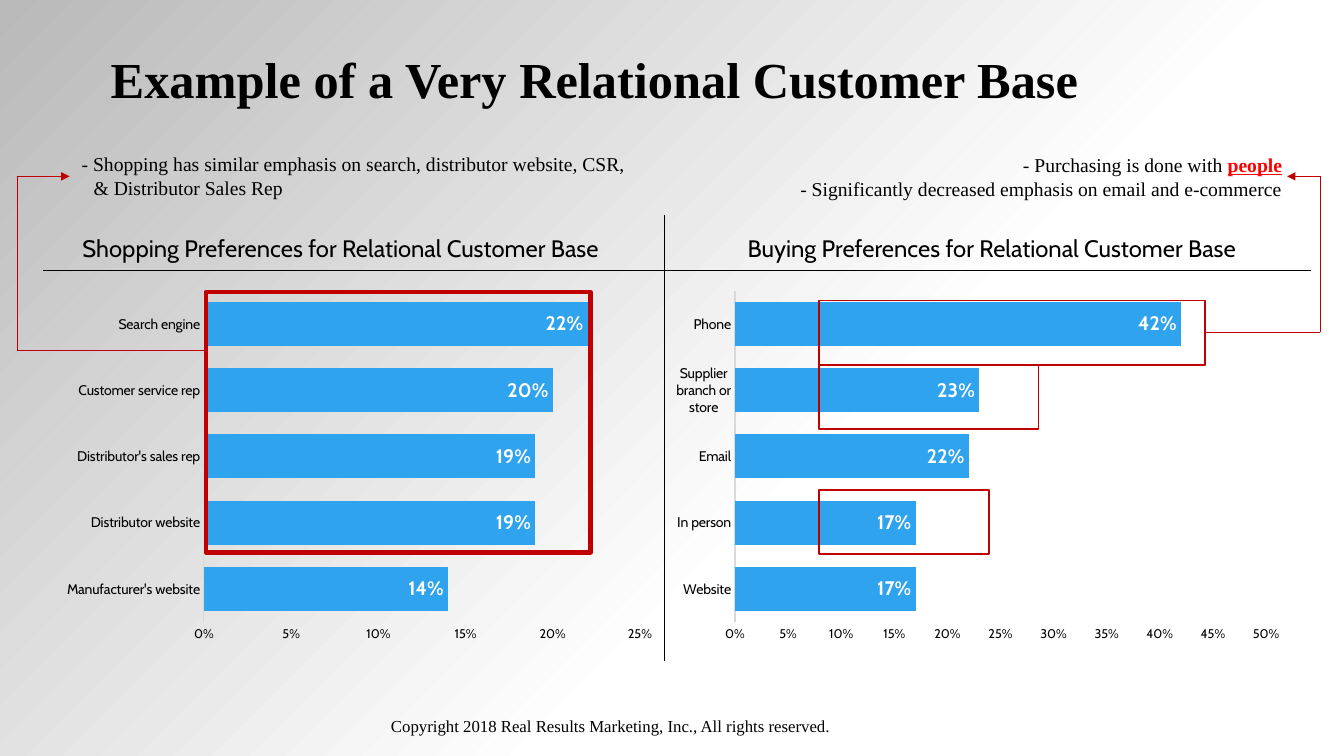
from dataclasses import dataclass
from itertools import pairwise

from lxml import etree
from pptx import Presentation
from pptx.chart.data import CategoryChartData
from pptx.dml.color import RGBColor
from pptx.enum.chart import XL_CHART_TYPE as CT, XL_LABEL_POSITION as LP, XL_TICK_MARK as TM
from pptx.enum.shapes import MSO_CONNECTOR as MC, MSO_SHAPE as MS
from pptx.enum.text import MSO_ANCHOR as MA, PP_ALIGN as AL
from pptx.oxml import parse_xml
from pptx.oxml.ns import nsdecls, qn
from pptx.util import Pt


@dataclass(frozen=True)
class Theme:
    serif: str = "Times New Roman"
    sans: str = "Cabin"
    black: str = "000000"
    white: str = "FFFFFF"
    shade: str = "B9B9B9"
    axis: str = "D9D9D9"
    bar: str = "2FA3EE"
    mark: str = "C00000"
    alert: str = "FF0000"
    title: float = 36
    heading: float = 17
    note: float = 14
    value: float = 14
    footer: float = 12
    category: float = 10
    scale: float = 9
    hairline: float = 0.75


T = Theme()

TITLE = "Example of a Very Relational Customer Base"
FOOTER = "Copyright 2018 Real Results Marketing, Inc., All rights reserved."
MID_X, RULE_Y = 474.5, 193
RULES = [((MID_X, 472.3), (MID_X, 153.4)), ((31, RULE_Y), (936.7, RULE_Y))]
CHART_TOP, CHART_H = 202.3, 261.4
PLOT_TOP, PLOT_H = 207.9, 236.4

# Notes hold paragraphs of (text, emphasised) runs; boxes are left, top, width, height.
PANELS = [
    dict(
        heading="Shopping Preferences for Relational Customer Base",
        heading_span=(0, 486.7),
        bars=[("Manufacturer's website", 0.14), ("Distributor website", 0.19),
              ("Distributor's sales rep", 0.19), ("Customer service rep", 0.20),
              ("Search engine", 0.22)],
        top_value=0.25, chart_span=(38.9, 435.6), plot_span=(145.7, 311.4),
        note=[[("- Shopping has similar emphasis on search, distributor website, "
                "CSR, & Distributor Sales Rep", False)]],
        note_box=(50.4, 105.1, 404.6, 41.8), note_align=AL.LEFT, hanging=(9.4, -8.6),
        frames=[(146.9, 208.8, 275, 185.8)], frame_line=3,
        route=[(146.9, 250.4), (12.8, 250.4), (12.8, 126), (49.7, 126)],
    ),
    dict(
        heading="Buying Preferences for Relational Customer Base",
        heading_span=(MID_X, 468),
        bars=[("Website", 0.17), ("In person", 0.17), ("Email", 0.22),
              ("Supplier branch or store", 0.23), ("Phone", 0.42)],
        top_value=0.5, chart_span=(MID_X, 448.6), plot_span=(525, 379.3),
        note=[[("- Purchasing is done with ", False), ("people", True)],
              [("- Significantly decreased emphasis on email and e-commerce", False)]],
        note_box=(493.2, 105.8, 429.8, 41), note_align=AL.RIGHT, hanging=None,
        frames=[(584.8, 214.6, 276.2, 46), (584.8, 260.6, 157, 46),
                (584.8, 350, 121.7, 46)], frame_line=1.25,
        route=[(860.6, 237.3), (943, 237.3), (943, 126), (919.4, 126)],
    ),
]


def rgb(code):
    return RGBColor.from_string(code)


def style(font, name, size, color=T.black, bold=False):
    font.name, font.size, font.bold = name, Pt(size), bold
    font.color.rgb = rgb(color)


def stroke(line, color, width=T.hairline):
    line.color.rgb = rgb(color)
    line.width = Pt(width)


def add_background(s):
    """Radial fade that is white around the bottom right corner."""
    s.background.fill.solid()
    bg_pr = s.background.fill._xPr
    bg_pr.replace(bg_pr[0], parse_xml(
        f'<a:gradFill {nsdecls("a")} rotWithShape="1"><a:gsLst>'
        f'<a:gs pos="38000"><a:srgbClr val="{T.white}"/></a:gs>'
        f'<a:gs pos="100000"><a:srgbClr val="{T.shade}"/></a:gs></a:gsLst>'
        '<a:path path="circle"><a:fillToRect l="100000" t="100000"/></a:path>'
        '<a:tileRect r="-100000" b="-100000"/></a:gradFill>'))


def add_text(s, box, paragraphs, font, size, align=AL.LEFT, anchor=MA.TOP, bold=False):
    tf = s.shapes.add_textbox(*map(Pt, box)).text_frame
    tf.word_wrap, tf.vertical_anchor = True, anchor
    for i, runs in enumerate(paragraphs):
        p = tf.add_paragraph() if i else tf.paragraphs[0]
        p.alignment = align
        for text, emphasised in runs:
            r = p.add_run()
            r.text = text
            style(r.font, font, size, T.alert if emphasised else T.black, bold or emphasised)
            r.font.underline = emphasised
    return tf


def add_line(s, start, end, color, arrow=False):
    sp = s.shapes.add_connector(MC.STRAIGHT, *map(Pt, (*start, *end)))
    stroke(sp.line, color)
    if arrow:
        etree.SubElement(sp.line._get_or_add_ln(), qn("a:tailEnd"), type="triangle")
    etree.SubElement(sp._element.spPr, qn("a:effectLst"))


def place_plot(chart, panel):
    """Fix the inner plot area and leave both chart areas unfilled."""
    left, width = panel["chart_span"]
    plot_left, plot_width = panel["plot_span"]
    parts = dict(x=(plot_left - left) / width, y=(PLOT_TOP - CHART_TOP) / CHART_H,
                 w=plot_width / width, h=PLOT_H / CHART_H)
    sizes = "".join(f'<c:{k} val="{v:.4f}"/>' for k, v in parts.items())
    root = chart._chartSpace
    area = root.chart.plotArea
    for old in area.findall(qn("c:layout")):
        area.remove(old)
    area.insert(0, parse_xml(
        f'<c:layout {nsdecls("c")}><c:manualLayout><c:layoutTarget val="inner"/>'
        f'<c:xMode val="edge"/><c:yMode val="edge"/>{sizes}</c:manualLayout></c:layout>'))
    clear = f'<c:spPr {nsdecls("c", "a")}><a:noFill/><a:ln><a:noFill/></a:ln></c:spPr>'
    area.append(parse_xml(clear))
    root.chart.addnext(parse_xml(clear))


def add_bar_chart(s, panel):
    data = CategoryChartData(number_format="0%")
    names, values = zip(*panel["bars"])
    data.categories = names
    data.add_series("Series 1", values)
    left, width = panel["chart_span"]
    box = map(Pt, (left, CHART_TOP, width, CHART_H))
    chart = s.shapes.add_chart(CT.BAR_CLUSTERED, *box, data).chart
    chart.has_legend = chart.has_title = False
    style(chart.font, T.sans, T.category)

    plot = chart.plots[0]
    plot.gap_width, plot.overlap, plot.vary_by_categories = 50, 50, False
    fill = plot.series[0].format.fill
    fill.solid()
    fill.fore_color.rgb = rgb(T.bar)
    plot.has_data_labels = True
    labels = plot.data_labels
    labels.show_value, labels.position = True, LP.INSIDE_END
    labels.number_format, labels.number_format_is_linked = "0%", False
    style(labels.font, T.sans, T.value, T.white, True)

    cat, val = chart.category_axis, chart.value_axis
    for axis, size in ((cat, T.category), (val, T.scale)):
        axis.major_tick_mark = axis.minor_tick_mark = TM.NONE
        axis.has_major_gridlines = False
        style(axis.tick_labels.font, T.sans, size)
    stroke(cat.format.line, T.axis)
    val.format.line.fill.background()
    val.minimum_scale, val.maximum_scale, val.major_unit = 0, panel["top_value"], 0.05
    val.tick_labels.number_format, val.tick_labels.number_format_is_linked = "0%", False
    place_plot(chart, panel)


def add_panel(s, panel):
    add_bar_chart(s, panel)
    left, width = panel["heading_span"]
    add_text(s, (left, 163.4, width, 28.1), [[(panel["heading"], False)]],
             T.sans, T.heading, AL.CENTER)
    tf = add_text(s, panel["note_box"], panel["note"], T.serif, T.note, panel["note_align"])
    if panel["hanging"]:
        pPr = tf.paragraphs[0]._p.get_or_add_pPr()
        for key, size in zip(("marL", "indent"), panel["hanging"]):
            pPr.set(key, str(Pt(size)))
    for box in panel["frames"]:
        sp = s.shapes.add_shape(MS.RECTANGLE, *map(Pt, box))
        sp.shadow.inherit = False
        sp.fill.background()
        stroke(sp.line, T.mark, panel["frame_line"])
    for start, end in pairwise(panel["route"]):
        add_line(s, start, end, T.mark, arrow=end == panel["route"][-1])


def main():
    prs = Presentation()
    prs.slide_width, prs.slide_height = Pt(960), Pt(540)
    s = prs.slides.add_slide(prs.slide_layouts[6])
    add_background(s)
    tf = add_text(s, (72, 22.3, 816, 73.4), [[(TITLE, False)]], T.serif, T.title,
                  anchor=MA.MIDDLE, bold=True)
    tf.paragraphs[0].line_spacing = 0.9
    add_text(s, (272.2, 504, 525.6, 28.8), [[(FOOTER, False)]], T.serif, T.footer,
             anchor=MA.MIDDLE)
    for start, end in RULES:
        add_line(s, start, end, T.black)
    for panel in PANELS:
        add_panel(s, panel)
    prs.save("out.pptx")


if __name__ == "__main__":
    main()
